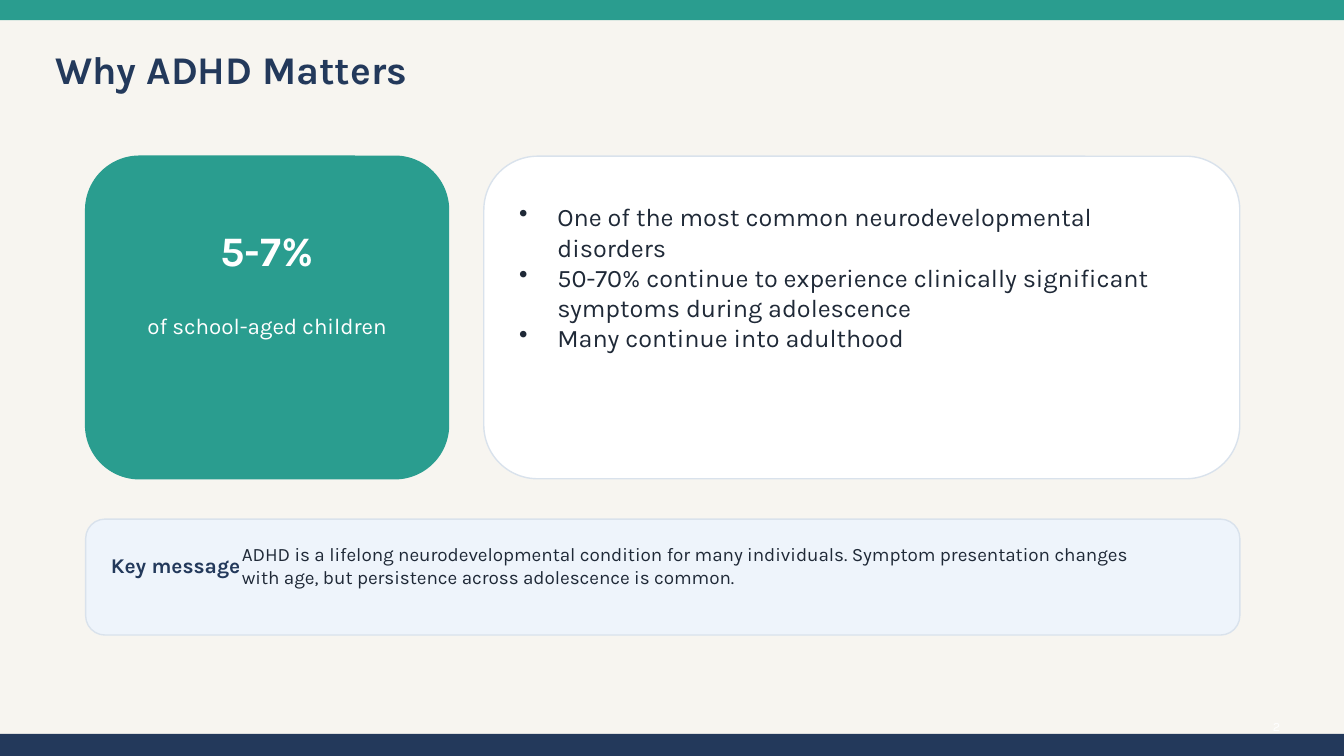
from dataclasses import dataclass
from typing import Any, Optional

from lxml import etree
from pptx import Presentation
from pptx.dml.color import RGBColor
from pptx.enum import shapes, text
from pptx.oxml import ns
from pptx.util import Pt


@dataclass(frozen=True)
class Theme:
    font: str = "Karla"
    background: str = "F7F5F0"
    teal: str = "2A9D8F"
    navy: str = "23395B"
    white: str = "FFFFFF"
    border: str = "D9E2EC"
    pale_blue: str = "EEF4FB"
    ink: str = "1F2937"
    title_size: float = 28
    figure_size: float = 30
    bullet_size: float = 18
    caption_size: float = 16
    label_size: float = 15
    message_size: float = 13.5
    number_size: float = 9


@dataclass(frozen=True)
class Box:
    left: float
    top: float
    width: float
    height: float

    def lengths(self) -> tuple[Pt, Pt, Pt, Pt]:
        return Pt(self.left), Pt(self.top), Pt(self.width), Pt(self.height)


@dataclass(frozen=True)
class Panel:
    box: Box
    fill: str
    border: Optional[str] = None
    rounded: bool = True


THEME = Theme()
WIDTH, HEIGHT = 960, 540
BULLET_INDENT = 27.36
LEFT = 61.2
RIGHT = 885.6
CARD_TOP, CARD_HEIGHT = 111.6, 230.4
FACTS_LEFT = 345.6

PANELS = [
    Panel(Box(0, 0, WIDTH, 14.4), THEME.teal, rounded=False),
    Panel(Box(0, 524.16, WIDTH, 15.84), THEME.navy, rounded=False),
    Panel(Box(LEFT, CARD_TOP, 259.2, CARD_HEIGHT), THEME.teal, THEME.teal),
    Panel(Box(FACTS_LEFT, CARD_TOP, RIGHT - FACTS_LEFT, CARD_HEIGHT), THEME.white, THEME.border),
    Panel(Box(LEFT, 370.8, RIGHT - LEFT, 82.8), THEME.pale_blue, THEME.border),
]

FACTS = [
    "One of the most common neurodevelopmental disorders",
    "50-70% continue to experience clinically significant symptoms during adolescence",
    "Many continue into adulthood",
]

KEY_MESSAGE = (
    "ADHD is a lifelong neurodevelopmental condition for many individuals. "
    "Symptom presentation changes with age, but persistence across adolescence is common."
)


def draw_panel(slide: Any, panel: Panel) -> None:
    kind = shapes.MSO_SHAPE.ROUNDED_RECTANGLE if panel.rounded else shapes.MSO_SHAPE.RECTANGLE
    shape = slide.shapes.add_shape(kind, *panel.box.lengths())
    shape.shadow.inherit = False
    shape.fill.solid()
    shape.fill.fore_color.rgb = RGBColor.from_string(panel.fill)
    if panel.border is None:
        shape.line.fill.background()
    else:
        shape.line.color.rgb = RGBColor.from_string(panel.border)
        shape.line.width = Pt(1)


def add_bullet(paragraph: Any) -> None:
    properties = paragraph._p.get_or_add_pPr()
    properties.set("marL", str(Pt(BULLET_INDENT)))
    properties.set("indent", str(-Pt(BULLET_INDENT)))
    etree.SubElement(properties, ns.qn("a:buChar")).set("char", "•")


def write(
    shape: Any,
    *lines: str,
    size: float,
    color: str,
    bold: bool = False,
    align: Any = text.PP_ALIGN.LEFT,
    anchor: Any = text.MSO_ANCHOR.MIDDLE,
    bullets: bool = False,
) -> None:
    frame = shape.text_frame
    frame.word_wrap = True
    frame.auto_size = text.MSO_AUTO_SIZE.NONE
    frame.vertical_anchor = anchor
    frame.margin_left = frame.margin_top = frame.margin_right = frame.margin_bottom = 0
    frame.text = "\n".join(lines)
    for paragraph in frame.paragraphs:
        paragraph.alignment = align
        if bullets:
            add_bullet(paragraph)
        for run in paragraph.runs:
            run.font.name = THEME.font
            run.font.size = Pt(size)
            run.font.bold = bold
            run.font.color.rgb = RGBColor.from_string(color)


def add_text(slide: Any, box: Box, *lines: str, **style: Any) -> None:
    write(slide.shapes.add_textbox(*box.lengths()), *lines, **style)


def main() -> None:
    presentation = Presentation()
    presentation.slide_width, presentation.slide_height = Pt(WIDTH), Pt(HEIGHT)
    slide = presentation.slides.add_slide(presentation.slide_layouts.get_by_name("Title Only"))
    slide.background.fill.solid()
    slide.background.fill.fore_color.rgb = RGBColor.from_string(THEME.background)

    title = slide.shapes.title
    title.left, title.top, title.width, title.height = Box(39.6, 27.36, 633.6, 43.2).lengths()
    write(title, "Why ADHD Matters", size=THEME.title_size, color=THEME.navy, bold=True)

    for panel in PANELS:
        draw_panel(slide, panel)

    center, right = text.PP_ALIGN.CENTER, text.PP_ALIGN.RIGHT
    add_text(slide, Box(889.2, 512.64, 25.2, 12.96), "2",
             size=THEME.number_size, color=THEME.white, align=right)
    add_text(slide, Box(82.8, 144, 216, 68.4), "5-7%",
             size=THEME.figure_size, color=THEME.white, bold=True, align=center)
    add_text(slide, Box(82.8, 216, 216, 32.4), "of school-aged children",
             size=THEME.caption_size, color=THEME.white, align=center)
    add_text(slide, Box(370.8, 144, 482.4, 158.4), *FACTS, size=THEME.bullet_size,
             color=THEME.ink, anchor=text.MSO_ANCHOR.TOP, bullets=True)
    add_text(slide, Box(79.2, 394.56, 108, 18), "Key message",
             size=THEME.label_size, color=THEME.navy, bold=True)
    add_text(slide, Box(172.8, 388.8, 662.4, 30.24), KEY_MESSAGE,
             size=THEME.message_size, color=THEME.ink)

    presentation.save("out.pptx")


if __name__ == "__main__":
    main()
